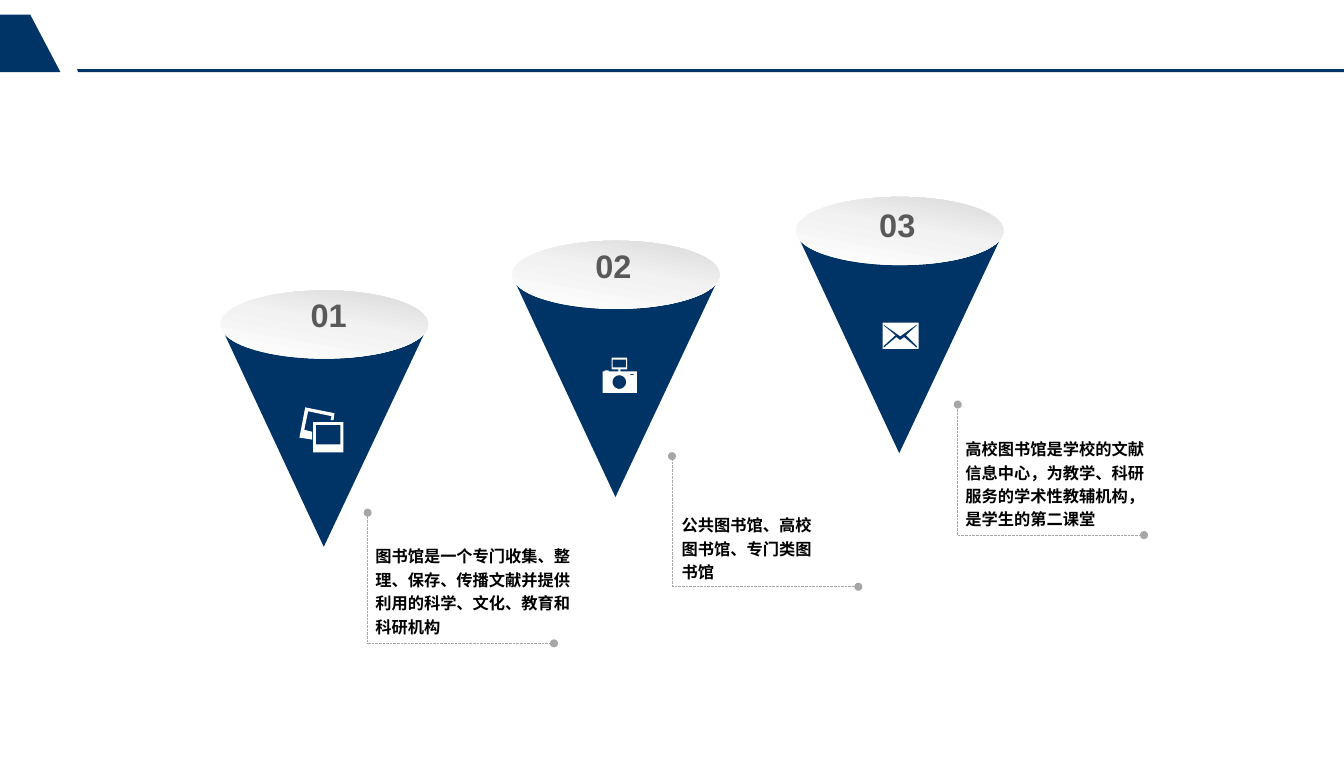
from dataclasses import dataclass
from math import cos, pi, sin

from pptx import Presentation
from pptx.dml.color import RGBColor
from pptx.enum.dml import MSO_LINE
from pptx.enum.shapes import MSO_CONNECTOR, MSO_SHAPE
from pptx.enum.text import MSO_AUTO_SIZE, PP_ALIGN
from pptx.oxml import parse_xml
from pptx.oxml.ns import nsdecls, qn
from pptx.shapes.shapetree import SlideShapes
from pptx.util import Emu, Pt

EMU_PER_PX = 9144  # 100 px to the inch

Point = tuple[float, float]
Outline = list[Point]
Box = tuple[int, int, int, int]


@dataclass(frozen=True)
class Theme:
    navy: str = "003366"
    white: str = "FFFFFF"
    number: str = "595959"
    body: str = "000000"
    guide: str = "A6A6A6"
    lid: tuple[tuple[int, str], ...] = ((0, "FFFFFF"), (53, "F2F2F2"), (100, "D9D9D9"))
    lid_angle: int = 280
    number_font: str = "Arial"
    body_font: str = "Noto Sans CJK SC"
    number_size: int = 24
    body_size: int = 12
    guide_width: float = 0.5
    line_spacing: float = 1.2


@dataclass(frozen=True)
class Step:
    number: str
    lid: tuple[int, int]
    number_at: tuple[int, int]
    icon: list[list[Outline]]
    corner: tuple[int, int]
    caption: str
    caption_box: Box


THEME = Theme()
LID_SIZE = (213, 70)
NUMBER_SIZE = (58, 59)
GUIDE_ACROSS, GUIDE_UP = 191, 134
CONE: Outline = [(205, 39), (211, 40), (106, 263), (2, 40), (9, 39)]


def px(length: float) -> Emu:
    return Emu(round(length * EMU_PER_PX))


def rectangle(left: int, top: int, right: int, bottom: int) -> Outline:
    return [(left, top), (right, top), (right, bottom), (left, bottom)]


def circle(x: int, y: int, radius: int, sides: int = 36) -> Outline:
    turns = [2 * pi * side / sides for side in range(sides)]
    return [(x + radius * cos(turn), y + radius * sin(turn)) for turn in turns]


PHOTOS: list[list[Outline]] = [
    [rectangle(321, 433, 352, 464), rectangle(324, 436, 349, 456)],
    [[(313, 418), (343, 424), (342, 431), (339, 431), (340, 427), (316, 422),
      (312, 441), (320, 443), (320, 451), (307, 449)]],
]
CAMERA: list[list[Outline]] = [[
    [(636, 381), (636, 379), (643, 379), (643, 367), (627, 367), (627, 379),
     (634, 379), (634, 381), (624, 381), (624, 380), (620, 380), (620, 381),
     (618, 381), (618, 403), (653, 403), (653, 381)],
    rectangle(628, 369, 642, 377),
    circle(635, 392, 7),
    rectangle(646, 384, 650, 385),
]]
ENVELOPE: list[list[Outline]] = [[
    rectangle(905, 331, 942, 358),
    [(940, 334), (929, 344), (940, 355), (940, 357), (927, 346), (923, 349),
     (919, 346), (906, 357), (906, 355), (918, 344), (906, 334), (906, 333),
     (923, 345), (940, 333)],
]]

STEPS = [
    Step("01", (226, 298), (308, 290), PHOTOS, (377, 660),
         "图书馆是一个专门收集、整理、保存、传播文献并提供利用的科学、文化、教育和科研机构",
         (375, 552, 226, 107)),
    Step("02", (525, 247), (600, 239), CAMERA, (689, 602),
         "公共图书馆、高校图书馆、专门类图书馆", (689, 520, 165, 83)),
    Step("03", (816, 202), (891, 197), ENVELOPE, (982, 549),
         "高校图书馆是学校的文献信息中心，为教学、科研服务的学术性教辅机构，是学生的第二课堂",
         (980, 442, 207, 107)),
]


def add_outline(shapes: SlideShapes, contours: list[Outline], colour: str) -> None:
    """Draw closed contours as one shape; inner contours become holes."""
    scaled = [[(px(x), px(y)) for x, y in contour] for contour in contours]
    builder = shapes.build_freeform(*scaled[0][0])
    for index, (start, *others) in enumerate(scaled):
        if index:
            builder.move_to(*start)
        builder.add_line_segments(others, close=True)
    shape = builder.convert_to_shape()
    shape.shadow.inherit = False
    shape.fill.solid()
    shape.fill.fore_color.rgb = RGBColor.from_string(colour)
    shape.line.fill.background()


def add_lid(shapes: SlideShapes, left: int, top: int) -> None:
    shape = shapes.add_shape(MSO_SHAPE.OVAL, *map(px, (left, top, *LID_SIZE)))
    shape.shadow.inherit = False
    shape.line.fill.background()
    stops = "".join(
        f'<a:gs pos="{percent * 1000}"><a:srgbClr val="{colour}"/></a:gs>'
        for percent, colour in THEME.lid
    )
    gradient = parse_xml(
        f'<a:gradFill {nsdecls("a")} rotWithShape="1"><a:gsLst>{stops}</a:gsLst>'
        f'<a:lin ang="{THEME.lid_angle * 60000}" scaled="0"/></a:gradFill>'
    )
    shape._element.spPr.find(qn("a:prstGeom")).addnext(gradient)


def add_text(shapes: SlideShapes, box: Box, text: str, font_name: str, size: int,
             colour: str, align: PP_ALIGN, wrap: bool) -> None:
    frame = shapes.add_textbox(*map(px, box)).text_frame
    frame.word_wrap = wrap
    frame.auto_size = MSO_AUTO_SIZE.SHAPE_TO_FIT_TEXT
    paragraph = frame.paragraphs[0]
    paragraph.alignment = align
    paragraph.line_spacing = THEME.line_spacing
    run = paragraph.add_run()
    run.text = text
    run.font.size = Pt(size)
    run.font.bold = True
    run.font.color.rgb = RGBColor.from_string(colour)
    run.font.name = font_name
    east_asian = parse_xml(f'<a:ea {nsdecls("a")} typeface="{font_name}"/>')
    run.font._element.append(east_asian)


def add_guide(shapes: SlideShapes, start: tuple[int, int], end: tuple[int, int]) -> None:
    """Draw a dotted line that ends in a dot."""
    connector = shapes.add_connector(MSO_CONNECTOR.STRAIGHT, *map(px, (*start, *end)))
    line = connector.line
    line.color.rgb = RGBColor.from_string(THEME.guide)
    line.width = Pt(THEME.guide_width)
    line.dash_style = MSO_LINE.ROUND_DOT
    properties = connector._element.spPr
    properties.find(qn("a:ln")).append(parse_xml(f'<a:tailEnd {nsdecls("a")} type="oval"/>'))
    properties.append(parse_xml(f'<a:effectLst {nsdecls("a")}/>'))


def add_step(shapes: SlideShapes, step: Step) -> None:
    left, top = step.lid
    add_outline(shapes, [[(left + x, top + y) for x, y in CONE]], THEME.navy)
    add_lid(shapes, left, top)
    add_text(shapes, (*step.number_at, *NUMBER_SIZE), step.number, THEME.number_font,
             THEME.number_size, THEME.number, PP_ALIGN.CENTER, wrap=False)
    for contours in step.icon:
        add_outline(shapes, contours, THEME.white)
    x, y = step.corner
    add_guide(shapes, step.corner, (x + GUIDE_ACROSS, y))
    add_guide(shapes, step.corner, (x, y - GUIDE_UP))
    add_text(shapes, step.caption_box, step.caption, THEME.body_font,
             THEME.body_size, THEME.body, PP_ALIGN.LEFT, wrap=True)


def main() -> None:
    presentation = Presentation()
    presentation.slide_width, presentation.slide_height = px(1378), px(791)
    slide = presentation.slides.add_slide(presentation.slide_layouts[6])
    header_rule = [(79, 71), (1378, 71), (1378, 74), (80, 74)]
    header_tab = [(31, 15), (62, 74), (0, 74), (0, 15)]
    for outline in (header_rule, header_tab):
        add_outline(slide.shapes, [outline], THEME.navy)
    for step in STEPS:
        add_step(slide.shapes, step)
    presentation.save("out.pptx")


if __name__ == "__main__":
    main()
